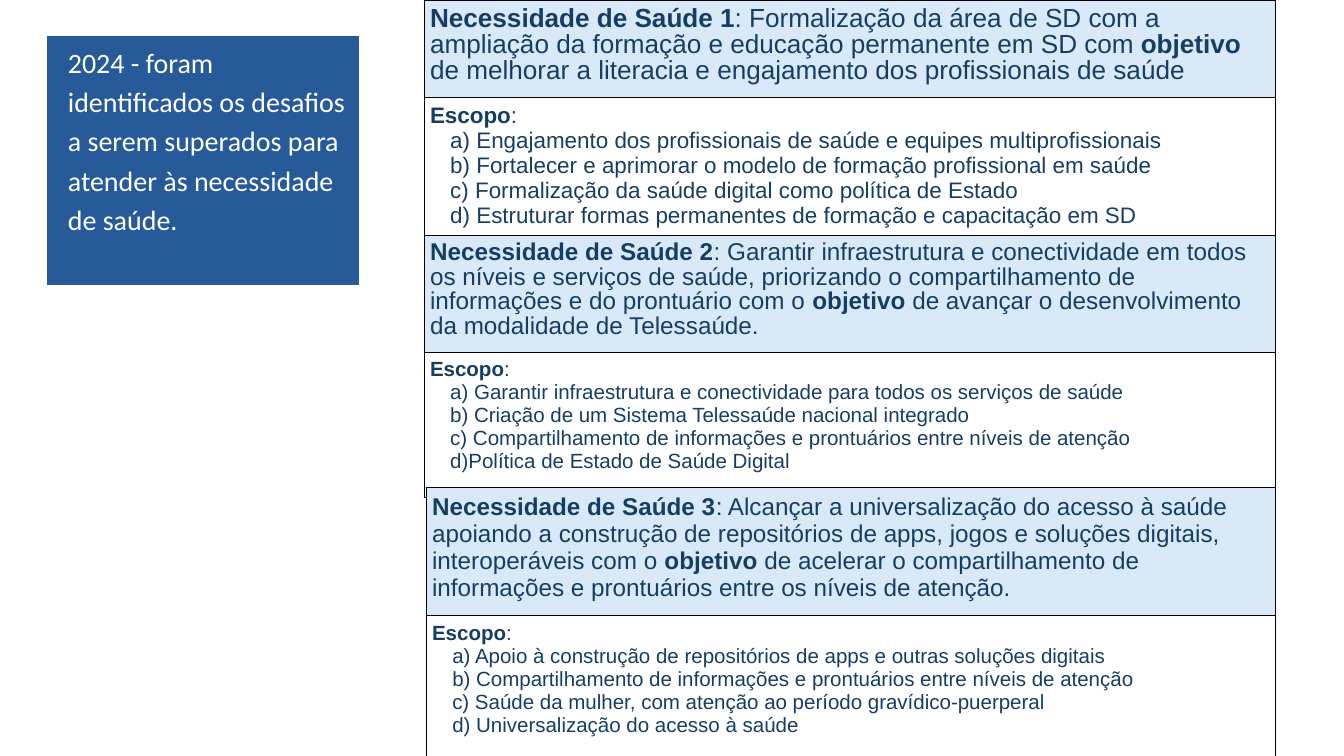
from lxml import etree
from pptx import Presentation
from pptx.dml.color import RGBColor
from pptx.oxml.ns import qn
from pptx.util import Inches, Pt

NAVY, PALE, BLUE, WHITE, BLACK = "163E64", "DAE9F7", "265A99", "FFFFFF", "000000"
SIDES = ("lnL", "lnR", "lnT", "lnB")
GRID = (1, 1, 1, 1)

NOTE = "2024 - foram identificados os desafios a serem superados para atender às necessidade de saúde."
NEEDS = [
    {"box": (6.31, 0, 12.67), "rows": (1.45, 2.32), "sizes": (28, 24), "fills": (PALE, None),
     "head": {"line_spacing": 0.9},
     "need": "**Necessidade de Saúde 1**: Formalização da área de SD com a ampliação da formação e "
             "educação permanente em SD com **objetivo** de melhorar a literacia e engajamento dos "
             "profissionais de saúde",
     "scope": ["a) Engajamento dos profissionais de saúde e equipes multiprofissionais",
               "b) Fortalecer e aprimorar o modelo de formação profissional em saúde",
               "c) Formalização da saúde digital como política de Estado",
               "d) Estruturar formas permanentes de formação e capacitação em SD"]},
    {"box": (6.31, 3.5, 12.67), "rows": (1.74, 2.16), "sizes": (26, 22), "fills": (PALE, WHITE),
     "head": {"line_spacing": 0.9, "space_after": Pt(8)},
     "need": "**Necessidade de Saúde 2**: Garantir infraestrutura e conectividade em todos os níveis e "
             "serviços de saúde, priorizando o compartilhamento de informações e do prontuário com o "
             "**objetivo** de avançar o desenvolvimento da modalidade de Telessaúde.",
     "scope": ["a) Garantir infraestrutura e conectividade para todos os serviços de saúde",
               "b) Criação de um Sistema Telessaúde nacional integrado",
               "c) Compartilhamento de informações e prontuários entre níveis de atenção",
               "d)Política de Estado de Saúde Digital"]},
    {"box": (6.34, 7.25, 12.64), "rows": (1.91, 2.12), "sizes": (26, 22), "fills": (PALE, WHITE),
     "head": {},
     "need": "**Necessidade de Saúde 3**: Alcançar a universalização do acesso à saúde apoiando a "
             "construção de repositórios de apps, jogos e soluções digitais, interoperáveis com o "
             "**objetivo** de acelerar o compartilhamento de informações e prontuários entre os níveis "
             "de atenção.",
     "scope": ["a) Apoio à construção de repositórios de apps e outras soluções digitais",
               "b) Compartilhamento de informações e prontuários entre níveis de atenção",
               "c) Saúde da mulher, com atenção ao período gravídico-puerperal",
               "d) Universalização do acesso à saúde"]},
]


def color(code):
    return RGBColor.from_string(code)


def assign(obj, values):
    for name, value in values.items():
        setattr(obj, name, value)


def write(para, text, size, name="Arial", code=NAVY, left=0, first=0, **form):
    props = para._p.get_or_add_pPr()
    props.set("marL", str(Inches(left)))
    props.set("indent", str(Inches(first)))
    assign(para, form)
    for i, part in enumerate(text.split("**")):
        if part:
            run = para.add_run()
            run.text = part
            assign(run.font, {"size": Pt(size), "name": name, "bold": i % 2 == 1})
            run.font.color.rgb = color(code)


def border(cell, code, widths):
    props = cell._tc.get_or_add_tcPr()
    for side, width in zip(SIDES, widths):
        line = etree.SubElement(props, qn("a:" + side), w=str(Pt(width)))
        fill = etree.SubElement(line, qn("a:solidFill"))
        etree.SubElement(fill, qn("a:srgbClr"), val=code)


def build(slide, box, rows, fills, edge, widths):
    left, top, width = box
    table = slide.shapes.add_table(len(rows), 1, Inches(left), Inches(top),
                                   Inches(width), Inches(sum(rows))).table
    assign(table, {"first_row": False, "horz_banding": False})
    cells = [table.cell(i, 0) for i in range(len(rows))]
    pad = Inches(0.09)
    for row, high, cell, code in zip(table.rows, rows, cells, fills):
        row.height = Inches(high)
        assign(cell, {"margin_left": pad, "margin_right": pad, "margin_top": pad, "margin_bottom": pad})
        border(cell, edge, widths)
        if code:
            cell.fill.solid()
            cell.fill.fore_color.rgb = color(code)
        else:
            cell.fill.background()
    return [cell.text_frame for cell in cells]


def main():
    """Build the slide of health needs and their scopes."""
    deck = Presentation()
    assign(deck, {"slide_width": Inches(20), "slide_height": Inches(11.25)})
    slide = deck.slides.add_slide(deck.slide_layouts[6])
    for item in NEEDS:
        head, body = build(slide, item["box"], item["rows"], item["fills"], BLACK, GRID)
        big, small = item["sizes"]
        write(head.paragraphs[0], item["need"], big, **item["head"])
        write(body.paragraphs[0], "**Escopo**:", small)
        for text in item["scope"]:
            write(body.add_paragraph(), text, small, first=0.3)
    note, = build(slide, (0.69, 0.53, 4.66), (3.73,), (BLUE,), WHITE, (1, 1, 1, 3))
    write(note.paragraphs[0], NOTE, 30, "Calibri", WHITE, left=0.23,
          line_spacing=1.15, space_after=Pt(3))
    deck.save("out.pptx")


if __name__ == "__main__":
    main()
